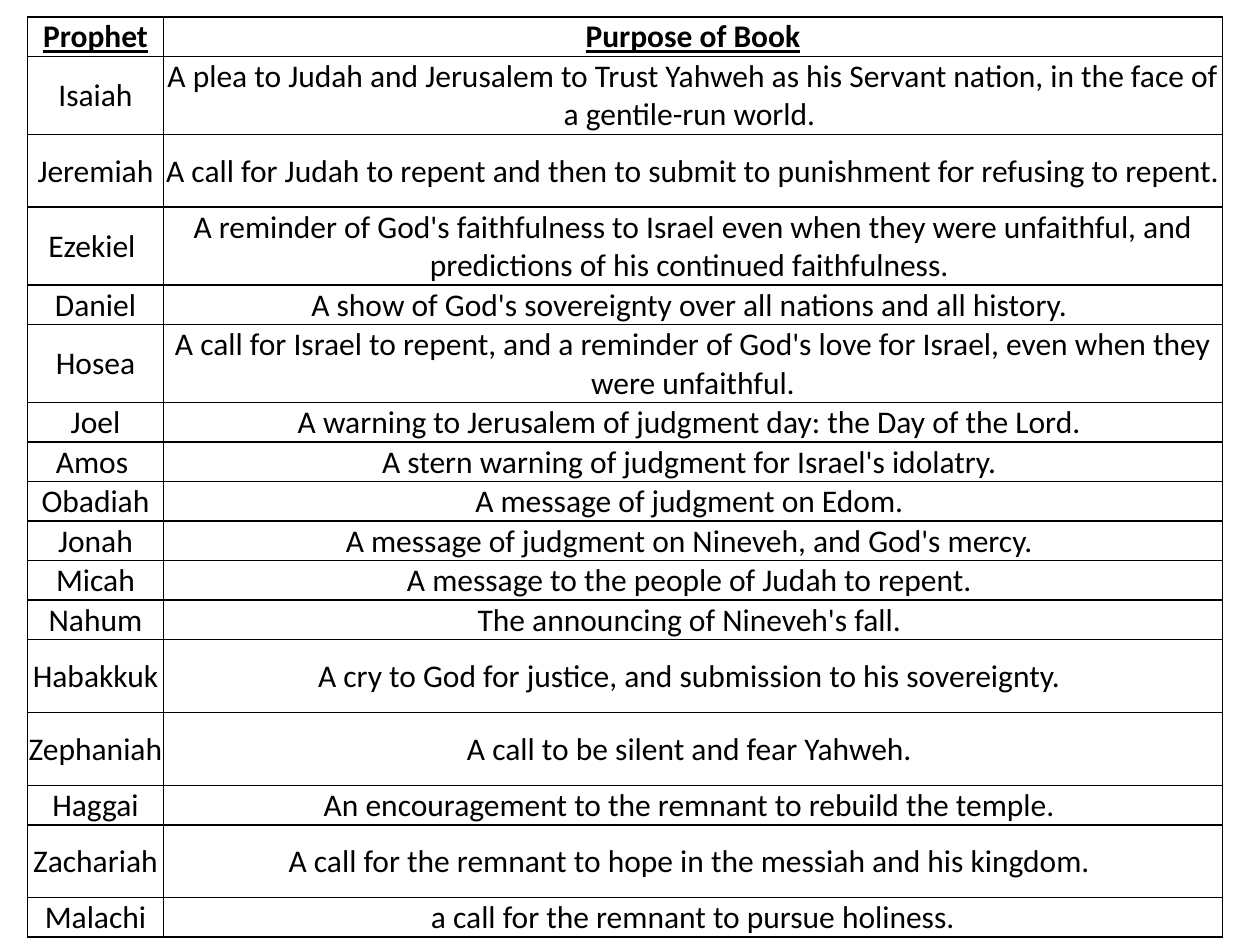
from lxml import etree
from pptx import Presentation, util as u
from pptx.dml.color import RGBColor
from pptx.enum import shapes, text
from pptx.oxml import ns

HEADINGS = ("Prophet", "Purpose of Book")
BOOKS = [
    ("Isaiah", "A plea to Judah and Jerusalem to Trust Yahweh as his Servant nation, in the face of a gentile-run world. "),
    ("Jeremiah", "A call for Judah to repent and then to submit to punishment for refusing to repent. "),
    ("Ezekiel ", "A reminder of God's faithfulness to Israel even when they were unfaithful, and predictions of his continued faithfulness. "),
    ("Daniel", "A show of God's sovereignty over all nations and all history. "),
    ("Hosea", "A call for Israel to repent, and a reminder of God's love for Israel, even when they were unfaithful."),
    ("Joel", "A warning to Jerusalem of judgment day: the Day of the Lord. "),
    ("Amos ", "A stern warning of judgment for Israel's idolatry. "),
    ("Obadiah", "A message of judgment on Edom. "),
    ("Jonah", "A message of judgment on Nineveh, and God's mercy. "),
    ("Micah", "A message to the people of Judah to repent. "),
    ("Nahum", "The announcing of Nineveh's fall. "),
    ("Habakkuk", "A cry to God for justice, and submission to his sovereignty. "),
    ("Zephaniah", "A call to be silent and fear Yahweh. "),
    ("Haggai", "An encouragement to the remnant to rebuild the temple. "),
    ("Zachariah", "A call for the remnant to hope in the messiah and his kingdom. "),
    ("Malachi", "a call for the remnant to pursue holiness."),
]
TALL = {"Isaiah", "Jeremiah", "Ezekiel ", "Hosea", "Habakkuk", "Zephaniah", "Zachariah"}
TALL_HEIGHT, SHORT_HEIGHT = u.Cm(1.47), u.Cm(0.76)
COLUMN_WIDTHS = (u.Cm(2.75), u.Cm(21.34))
INK, PAPER = "000000", "FFFFFF"
BODY_FONT = {"name": "Calibri", "size": u.Pt(18), "bold": False, "underline": False}
HEADING_FONT = {**BODY_FONT, "bold": True, "underline": True}
CELL_FORMAT = {
    "margin_left": u.Cm(0.02), "margin_right": u.Cm(0.02),
    "margin_top": u.Cm(0.02), "margin_bottom": 0,
    "vertical_anchor": text.MSO_ANCHOR.MIDDLE,
}


def colour(part, value):
    part.rgb = RGBColor.from_string(value)


def apply(part, settings):
    for key, value in settings.items():
        setattr(part, key, value)


def add_borders(cell):
    properties = cell._tc.get_or_add_tcPr()
    for side in ("lnL", "lnR", "lnT", "lnB"):
        border = etree.SubElement(properties, ns.qn(f"a:{side}"), w=str(u.Pt(1)))
        fill = etree.SubElement(border, ns.qn("a:solidFill"))
        etree.SubElement(fill, ns.qn("a:srgbClr"), val=INK)


def write_cell(cell, words, font):
    apply(cell, CELL_FORMAT)
    add_borders(cell)
    cell.fill.background()
    paragraph = cell.text_frame.paragraphs[0]
    paragraph.alignment = text.PP_ALIGN.CENTER
    run = paragraph.add_run()
    run.text = words
    apply(run.font, font)
    colour(run.font.color, INK)


def add_backdrop(slide, height):
    backdrop = slide.shapes.add_shape(
        shapes.MSO_SHAPE.RECTANGLE, u.Cm(-0.28), 0, u.Cm(25.68), height)
    backdrop.shadow.inherit = False
    backdrop.fill.solid()
    colour(backdrop.fill.fore_color, PAPER)
    backdrop.line.fill.background()


def add_books(slide):
    rows = [HEADINGS, *BOOKS]
    heights = [TALL_HEIGHT if prophet in TALL else SHORT_HEIGHT for prophet, _ in rows]
    books = slide.shapes.add_table(
        len(rows), len(HEADINGS), u.Cm(0.55), u.Cm(0.34),
        sum(COLUMN_WIDTHS), sum(heights)).table
    apply(books, {"first_row": False, "horz_banding": False})
    for column, width in zip(books.columns, COLUMN_WIDTHS):
        column.width = width
    for row, height, entries in zip(books.rows, heights, rows):
        row.height = height
        font = HEADING_FONT if entries is HEADINGS else BODY_FONT
        for cell, words in zip(row.cells, entries):
            write_cell(cell, words, font)


def main():
    """Build the slide that lists each prophet and the purpose of his book."""
    deck = Presentation()
    apply(deck, {"slide_width": u.Cm(25.4), "slide_height": u.Cm(19.05)})
    slide = deck.slides.add_slide(deck.slide_layouts[6])
    add_backdrop(slide, deck.slide_height)
    add_books(slide)
    deck.save("out.pptx")


if __name__ == "__main__":
    main()
